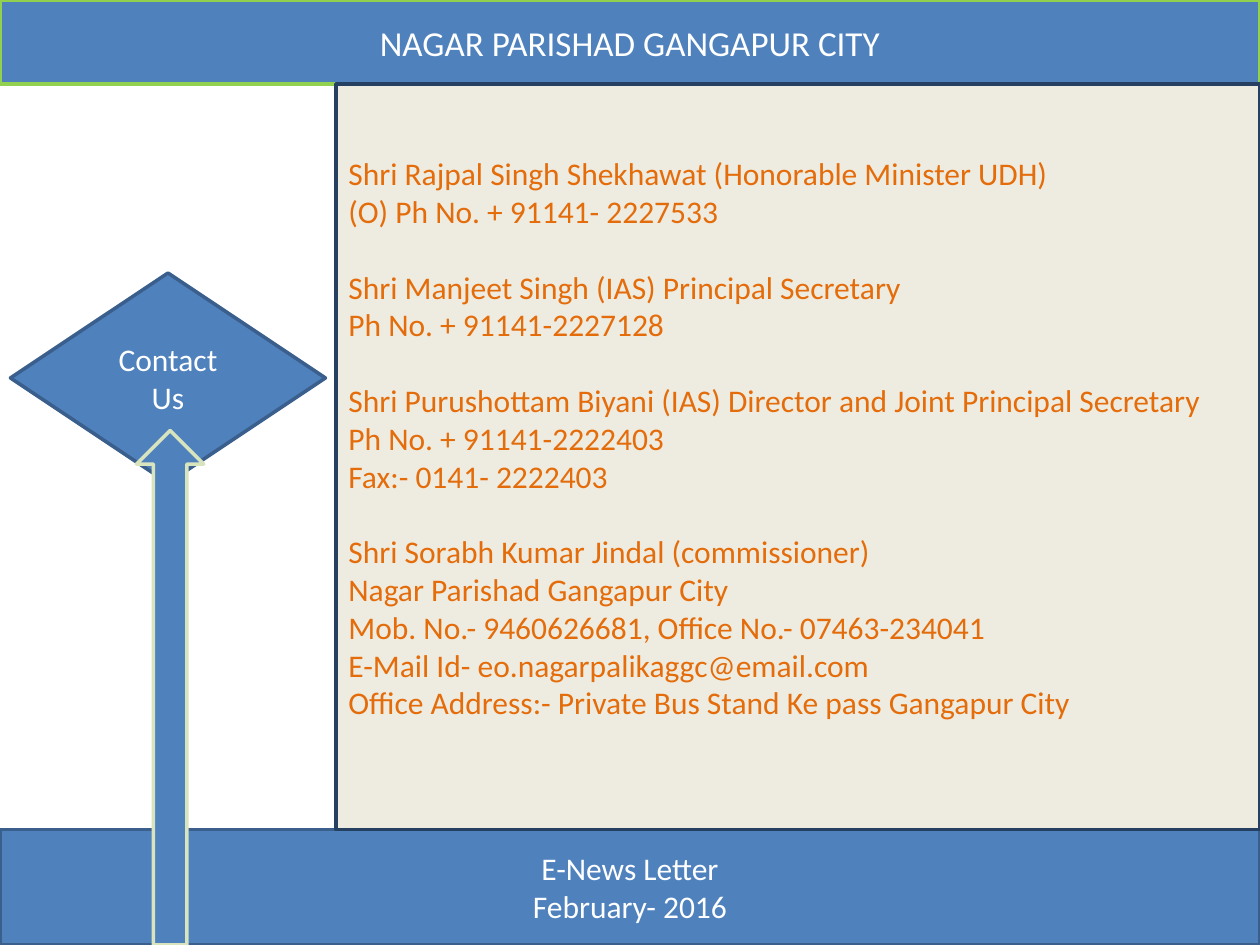
from dataclasses import dataclass

from pptx import Presentation, util as u
from pptx.dml.color import RGBColor
from pptx.enum import shapes, text

# Grid: 120 columns by 90 rows on a 10 x 7.5 inch slide
COLS, ROWS = 120, 90
CELL = u.Inches(10) // COLS
HEADER_END, FOOTER_TOP, PANEL_LEFT = 8, 79, 32


@dataclass(frozen=True)
class Theme:
    font: str = "Calibri"
    title_size: int = 20
    body_size: int = 18
    line_width: int = 2
    group_gap: float = 21.6  # one line of body text, in points
    blue: str = "4F81BD"
    dark_blue: str = "3A5F8C"
    navy: str = "254061"
    green: str = "92D050"
    pale_green: str = "D7E4BD"
    cream: str = "EEECE1"
    orange: str = "E46C0A"
    white: str = "FFFFFF"


THEME = Theme()

CONTACTS = [
    ["Shri Rajpal Singh Shekhawat (Honorable Minister UDH)",
     "(O) Ph No. + 91141- 2227533"],
    ["Shri Manjeet Singh (IAS) Principal Secretary",
     "Ph No. + 91141-2227128"],
    ["Shri Purushottam Biyani (IAS) Director and Joint Principal Secretary",
     "Ph No. + 91141-2222403",
     "Fax:- 0141- 2222403"],
    ["Shri Sorabh Kumar Jindal (commissioner)",
     "Nagar Parishad Gangapur City",
     "Mob. No.- 9460626681, Office No.- 07463-234041",
     "E-Mail Id- eo.nagarpalikaggc@email.com",
     "Office Address:- Private Bus Stand Ke pass Gangapur City"],
]


def style(sp, fill, line):
    sp.fill.solid()
    sp.fill.fore_color.rgb = RGBColor.from_string(fill)
    sp.line.color.rgb = RGBColor.from_string(line)
    sp.line.width = u.Pt(THEME.line_width)


def place(sp, col, row, cols, rows):
    sp.left, sp.top, sp.width, sp.height = (
        round(n * CELL) for n in (col, row, cols, rows))


def add_block(s, kind, grid, fill, line):
    sp = s.shapes.add_shape(kind, 0, 0, 0, 0)
    place(sp, *grid)
    sp.shadow.inherit = False
    style(sp, fill, line)
    return sp


def write(sp, groups, size=THEME.body_size, color=THEME.white,
          align=text.PP_ALIGN.CENTER):
    """Write groups of lines, with a gap above every group but the first."""
    tf = sp.text_frame
    tf.word_wrap = True
    tf.auto_size = text.MSO_AUTO_SIZE.NONE
    tf.vertical_anchor = text.MSO_ANCHOR.MIDDLE
    p = tf.paragraphs[0]
    for g, lines in enumerate(groups):
        for i, line in enumerate(lines):
            if g or i:
                p = tf.add_paragraph()
            p.alignment = align
            p.space_before = u.Pt(THEME.group_gap if g and not i else 0)
            r = p.add_run()
            r.text = line
            r.font.name = THEME.font
            r.font.size = u.Pt(size)
            r.font.color.rgb = RGBColor.from_string(color)


def add_header(s):
    title = s.shapes.title
    place(title, 0, 0, COLS, HEADER_END)
    style(title, THEME.blue, THEME.green)
    write(title, [["NAGAR PARISHAD GANGAPUR CITY"]], size=THEME.title_size)


def add_contacts(s):
    panel = add_block(
        s, shapes.MSO_SHAPE.RECTANGLE,
        (PANEL_LEFT, HEADER_END, COLS - PANEL_LEFT, FOOTER_TOP - HEADER_END),
        THEME.cream, THEME.navy)
    write(panel, CONTACTS, color=THEME.orange, align=text.PP_ALIGN.LEFT)
    # Lift the list by half a line
    panel.text_frame.margin_bottom = u.Inches(0.05) + u.Pt(THEME.group_gap)


def main():
    prs = Presentation()
    prs.slide_width, prs.slide_height = COLS * CELL, ROWS * CELL
    s = prs.slides.add_slide(prs.slide_layouts.get_by_name("Title Only"))
    shape = shapes.MSO_SHAPE

    # Header and footer bands
    add_header(s)
    footer = add_block(s, shape.RECTANGLE,
                       (0, FOOTER_TOP, COLS, ROWS - FOOTER_TOP),
                       THEME.blue, THEME.dark_blue)
    write(footer, [["E-News Letter", "February- 2016"]])

    # Signpost on the left
    sign = add_block(s, shape.DIAMOND, (1, 26, 30, 20),
                     THEME.blue, THEME.dark_blue)
    write(sign, [["Contact Us"]])
    add_block(s, shape.UP_ARROW, (13, 41, 6.4, ROWS - 41),
              THEME.blue, THEME.pale_green)

    # Contact list on the right
    add_contacts(s)
    prs.save("out.pptx")


if __name__ == "__main__":
    main()
